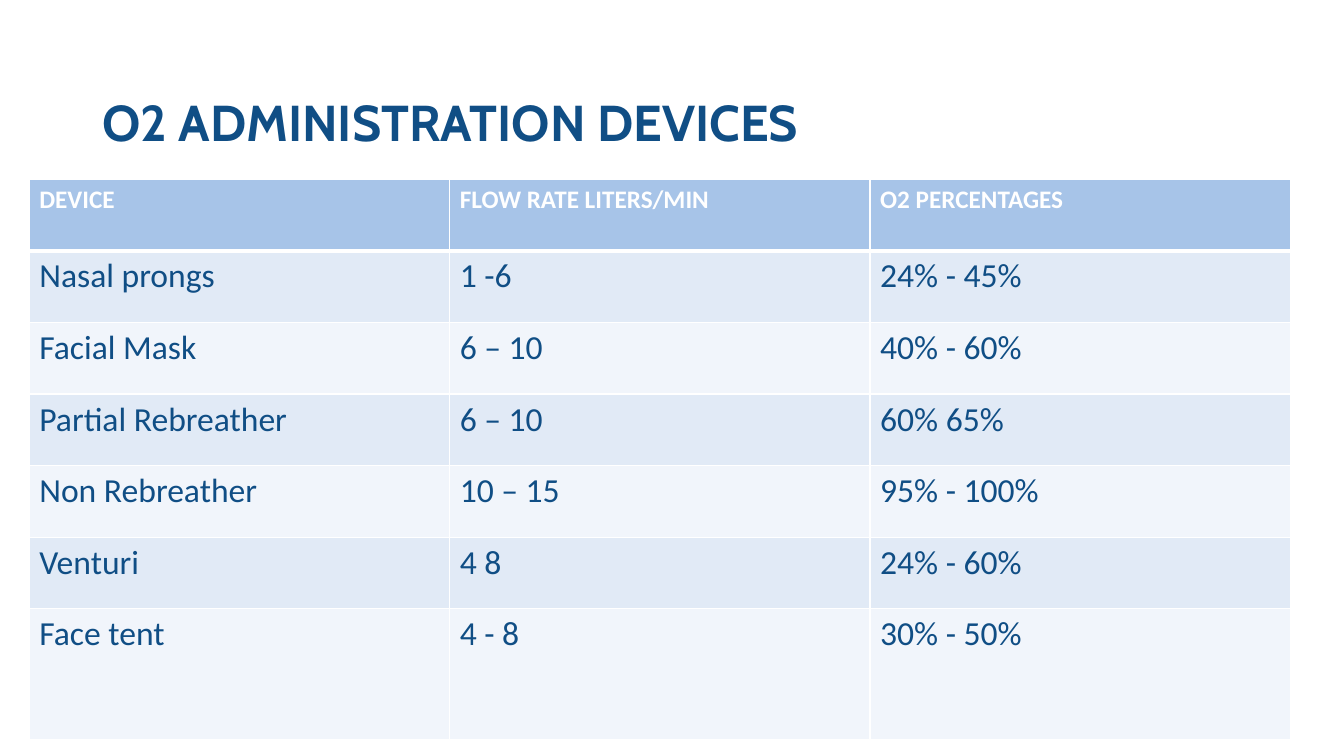
from dataclasses import dataclass

from lxml import etree
from pptx import Presentation
from pptx.dml.color import RGBColor as Color
from pptx.enum.text import MSO_ANCHOR as Anchor
from pptx.oxml.ns import qn
from pptx.util import Inches, Pt


@dataclass(frozen=True)
class Theme:
    navy: str = "104E85"
    white: str = "FFFFFF"
    header_fill: str = "A7C4E8"
    band_fills: tuple = ("E1EAF6", "F1F5FB")
    title_font: str = "Cabin"
    body_font: str = "Calibri"
    title_size: int = 36
    header_size: int = 18
    body_size: int = 24
    thin_line: int = 1
    thick_line: int = 3


class SlideBuilder:
    def __init__(self, page, theme):
        self.page = page
        self.theme = theme

    def set_font(self, para, name, size, color, bold):
        font = para.font
        font.name, font.size, font.bold = name, Pt(size), bold
        font.color.rgb = Color.from_string(color)

    def title(self, text, left, top, width, height):
        box = self.page.shapes.add_textbox(
            Inches(left), Inches(top), Inches(width), Inches(height))
        frame = box.text_frame
        frame.word_wrap = True
        frame.vertical_anchor = Anchor.MIDDLE
        para = frame.paragraphs[0]
        para.text = text
        para.line_spacing = 0.9
        theme = self.theme
        self.set_font(para, theme.title_font, theme.title_size, theme.navy, True)

    def borders(self, cell, widths):
        """Draw the cell's sides; the lines must precede the fill in the XML."""
        properties = cell._tc.get_or_add_tcPr()
        for position, (side, width) in enumerate(widths.items()):
            line = etree.Element(qn(f"a:{side}"), w=str(Pt(width)))
            fill = etree.SubElement(line, qn("a:solidFill"))
            etree.SubElement(fill, qn("a:srgbClr"), val=self.theme.white)
            properties.insert(position, line)

    def table(self, rows, left, top, column_width, row_heights):
        theme = self.theme
        columns = len(rows[0])
        table = self.page.shapes.add_table(
            len(rows), columns, Inches(left), Inches(top),
            Inches(column_width * columns), Inches(sum(row_heights))).table
        for column in table.columns:
            column.width = Inches(column_width)

        for index, (texts, height) in enumerate(zip(rows, row_heights)):
            table.rows[index].height = Inches(height)
            # Header row first, then alternating bands
            if index == 0:
                fill, size, color = theme.header_fill, theme.header_size, theme.white
            else:
                fill = theme.band_fills[(index - 1) % 2]
                size, color = theme.body_size, theme.navy
            # The rule under the header is heavier
            widths = {
                "lnL": theme.thin_line,
                "lnR": theme.thin_line,
                "lnT": theme.thick_line if index == 1 else theme.thin_line,
                "lnB": theme.thick_line if index == 0 else theme.thin_line,
            }
            for cell, text in zip(table.rows[index].cells, texts):
                cell.text = text
                cell.fill.solid()
                cell.fill.fore_color.rgb = Color.from_string(fill)
                self.borders(cell, widths)
                self.set_font(cell.text_frame.paragraphs[0], theme.body_font,
                              size, color, index == 0)


DEVICES = [
    ("DEVICE", "FLOW RATE LITERS/MIN", "O2 PERCENTAGES"),
    ("Nasal prongs", "1 -6", "24% - 45%"),
    ("Facial Mask", "6 – 10", "40% - 60%"),
    ("Partial Rebreather", "6 – 10", "60% 65%"),
    ("Non Rebreather", "10 – 15", "95% - 100%"),
    ("Venturi", "4 8", "24% - 60%"),
    ("Face tent", "4 - 8", "30% - 50%"),
]


def main():
    deck = Presentation()
    deck.slide_width, deck.slide_height = Inches(13.33), Inches(7.5)
    page = deck.slides.add_slide(deck.slide_layouts[6])
    builder = SlideBuilder(page, Theme())

    # Title
    builder.title("O2 ADMINISTRATION DEVICES", 0.92, 0.52, 11.5, 1.45)

    # Device table, with a taller last row
    row_heights = [0.71] * (len(DEVICES) - 1) + [1.3]
    builder.table(DEVICES, 0.29, 1.78, 4.17, row_heights)

    deck.save("out.pptx")


if __name__ == "__main__":
    main()
